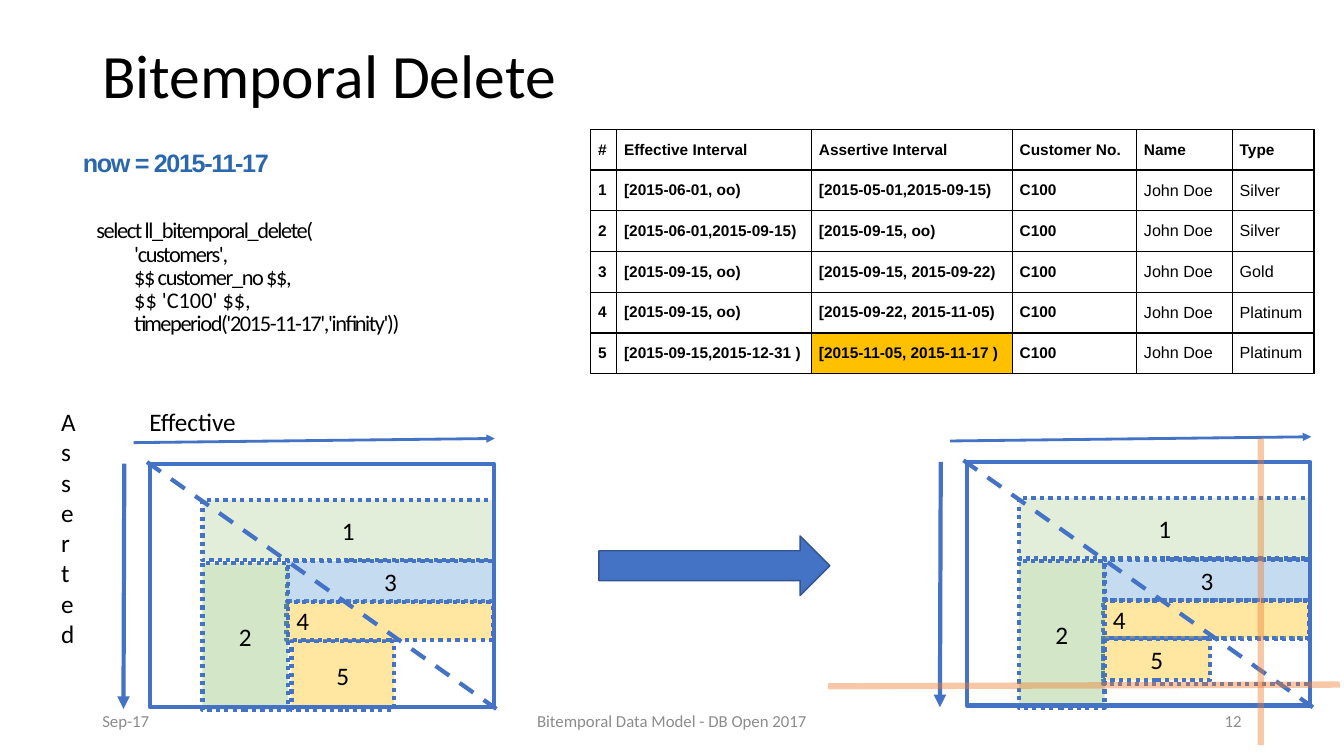
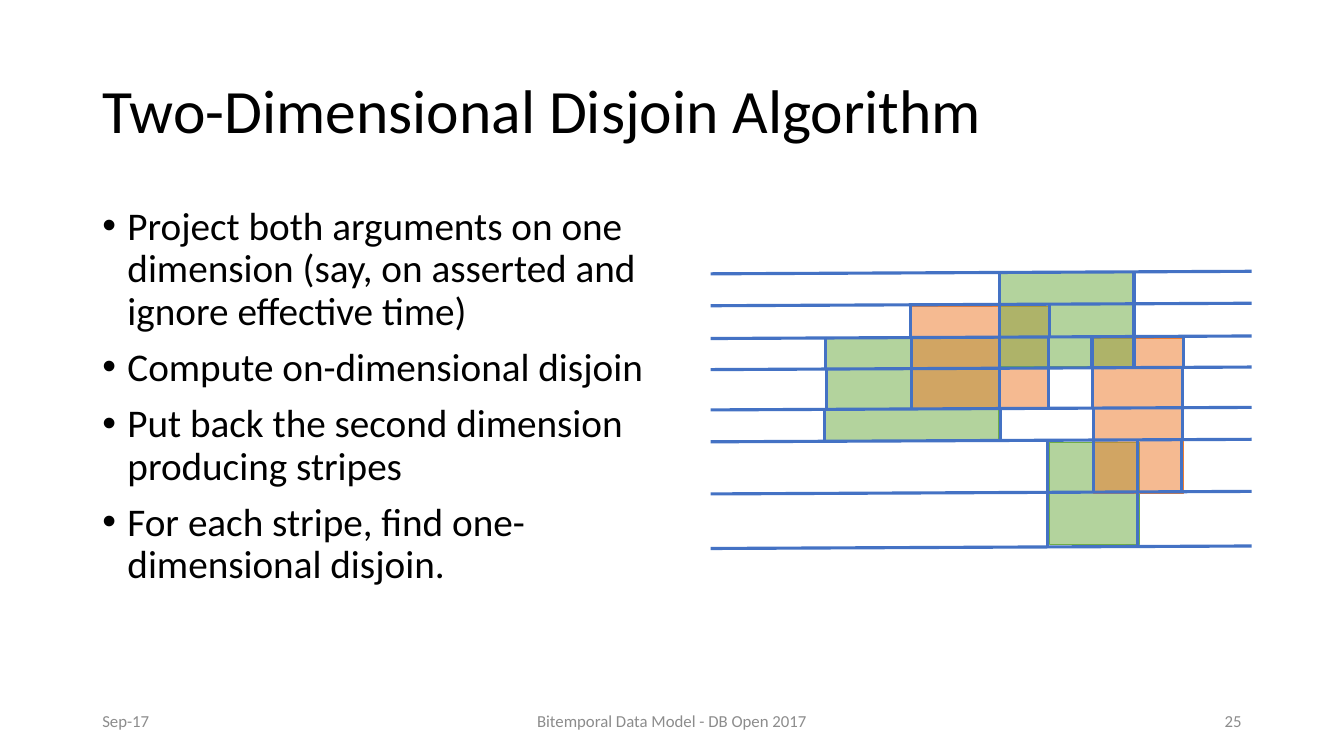
"""Build two slides on bitemporal data, laid out on a grid of 160 columns by 90 rows."""
from dataclasses import dataclass

from lxml import etree
from pptx import Presentation
from pptx import util as u
from pptx.dml import color as c
from pptx.enum import dml, shapes, text
from pptx.oxml import ns


@dataclass(frozen=True)
class Theme:
    body_font: str = "Calibri"
    table_font: str = "Arial"
    black: str = "000000"
    grey: str = "8C8C8C"
    blue: str = "4472C4"
    dark_blue: str = "325491"
    now_blue: str = "2A67AC"
    sky: str = "5B9BD5"
    green: str = "70AD47"
    orange: str = "ED7D31"
    gold: str = "FFC000"
    title: float = 44
    bullet: float = 28
    label: float = 18
    code: float = 16
    footer: float = 12
    table_bold: float = 11
    table_plain: float = 11.5


theme = Theme()
LEFT, CENTER, RIGHT = text.PP_ALIGN.LEFT, text.PP_ALIGN.CENTER, text.PP_ALIGN.RIGHT
TOP, MIDDLE = text.MSO_ANCHOR.TOP, text.MSO_ANCHOR.MIDDLE
DOTTED, DASHED = dml.MSO_LINE.ROUND_DOT, dml.MSO_LINE.DASH

presentation = Presentation()
presentation.slide_width, presentation.slide_height = u.Inches(40 / 3), u.Inches(7.5)
COLUMN = presentation.slide_width / 160
ROW = presentation.slide_height / 90


def put(slide, box, lines=(), size=theme.label, color=theme.black, align=LEFT, anchor=TOP,
        font=theme.body_font, bold=False, preset=None, fill=None, alpha=100,
        line=theme.blue, width=3, dash=None):
    """Place a text box, or a preset shape, on the grid."""
    left, top, wide, high = box
    place = [u.Emu(round(v)) for v in (left * COLUMN, top * ROW, wide * COLUMN, high * ROW)]
    if preset is None:
        shape = slide.shapes.add_textbox(*place)
    else:
        shape = slide.shapes.add_shape(preset, *place)
        shape.shadow.inherit = False
        shape.line.color.rgb = c.RGBColor.from_string(line)
        shape.line.width = u.Pt(width)
        if dash:
            shape.line.dash_style = dash
        if fill:
            shape.fill.solid()
            shape.fill.fore_color.rgb = c.RGBColor.from_string(fill)
            tint = shape.element.spPr.find(ns.qn("a:solidFill"))[0]
            etree.SubElement(tint, ns.qn("a:alpha"), val=str(alpha * 1000))
        else:
            shape.fill.background()
    frame = shape.text_frame
    frame.word_wrap = True
    frame.vertical_anchor = anchor
    for number, words in enumerate(lines):
        paragraph = frame.add_paragraph() if number else frame.paragraphs[0]
        paragraph.alignment = align
        run = paragraph.add_run()
        run.text = words
        run.font.name, run.font.size, run.font.bold = font, u.Pt(size), bold
        run.font.color.rgb = c.RGBColor.from_string(color)
    return shape


def rule(slide, x1, y1, x2, y2, color=theme.blue, width=2.25, dash=None, arrow=False, alpha=100):
    """Draw a straight line between two grid points."""
    connector = slide.shapes.add_connector(
        shapes.MSO_CONNECTOR.STRAIGHT, round(x1 * COLUMN), round(y1 * ROW),
        round(x2 * COLUMN), round(y2 * ROW))
    connector.line.color.rgb = c.RGBColor.from_string(color)
    connector.line.width = u.Pt(width)
    if dash:
        connector.line.dash_style = dash
    outline = connector.line.get_or_add_ln() if hasattr(connector.line, "get_or_add_ln") \
        else connector.element.spPr.find(ns.qn("a:ln"))
    if alpha < 100:
        tint = outline.find(ns.qn("a:solidFill"))[0]
        etree.SubElement(tint, ns.qn("a:alpha"), val=str(alpha * 1000))
    if arrow:
        etree.SubElement(outline, ns.qn("a:tailEnd"), type="triangle")
    etree.SubElement(connector.element.spPr, ns.qn("a:effectLst"))


pages = []
for heading, title_top, title_height, page in [
        ("Bitemporal Delete", 2.6, 13.6, "12"),
        ("Two-Dimensional Disjoin Algorithm", 4.8, 17.4, "25")]:
    slide = presentation.slides.add_slide(presentation.slide_layouts[6])
    title = put(slide, (11, title_top, 138, title_height), [heading], theme.title, anchor=MIDDLE)
    title.text_frame.paragraphs[0].line_spacing = 0.9
    for left, wide, words, align in [
            (11, 36, "Sep-17", LEFT),
            (53, 54, "Bitemporal Data Model - DB Open 2017", CENTER),
            (113, 36, page, RIGHT)]:
        put(slide, (left, 83.4, wide, 4.8), [words], theme.footer, theme.grey, align, MIDDLE)
    pages.append(slide)
delete_slide, disjoin_slide = pages

records = [
    ("#", "Effective Interval", "Assertive Interval", "Customer No.", "Name", "Type"),
    ("1", "[2015-06-01, oo)", "[2015-05-01,2015-09-15)", "C100", "John Doe", "Silver"),
    ("2", "[2015-06-01,2015-09-15)", "[2015-09-15, oo)", "C100", "John Doe", "Silver"),
    ("3", "[2015-09-15, oo)", "[2015-09-15, 2015-09-22)", "C100", "John Doe", "Gold"),
    ("4", "[2015-09-15, oo)", "[2015-09-22, 2015-11-05)", "C100", "John Doe", "Platinum"),
    ("5", "[2015-09-15,2015-12-31 )", "[2015-11-05, 2015-11-17 )", "C100", "John Doe", "Platinum"),
]
column_widths = [3.1, 23.2, 23.9, 14.8, 11.4, 9.7]
table = delete_slide.shapes.add_table(
    len(records), len(column_widths), round(70.3 * COLUMN), round(15.4 * ROW),
    round(sum(column_widths) * COLUMN), round(29.1 * ROW)).table
table.first_row = table.horz_banding = False
for column, wide in zip(table.columns, column_widths):
    column.width = round(wide * COLUMN)
for row_number, record in enumerate(records):
    for column_number, words in enumerate(record):
        cell = table.cell(row_number, column_number)
        cell.margin_left = round(0.9 * COLUMN)
        cell.margin_right = cell.margin_top = cell.margin_bottom = 0
        cell.vertical_anchor = MIDDLE
        run = cell.text_frame.paragraphs[0].add_run()
        run.text = words
        run.font.name = theme.table_font
        run.font.bold = row_number == 0 or column_number < 4
        run.font.size = u.Pt(theme.table_bold if run.font.bold else theme.table_plain)
        run.font.color.rgb = c.RGBColor.from_string(theme.black)
        properties = cell._tc.get_or_add_tcPr()
        for side in ("lnL", "lnR", "lnT", "lnB"):
            thick = side == "lnR" and column_number in (0, 5)
            border = etree.SubElement(properties, ns.qn("a:" + side),
                                      w=str(u.Pt(1.5 if thick else 1)))
            paint = etree.SubElement(border, ns.qn("a:solidFill"))
            etree.SubElement(paint, ns.qn("a:srgbClr"), val=theme.black)
        if (row_number, column_number) == (5, 2):
            cell.fill.solid()
            cell.fill.fore_color.rgb = c.RGBColor.from_string(theme.gold)
        else:
            cell.fill.background()

now = put(delete_slide, (8.7, 17, 29, 4.8), ["now = 2015-11-17"], color=theme.now_blue,
          font=theme.table_font, bold=True)
now.text_frame.paragraphs[0].runs[0]._r.get_or_add_rPr().set("spc", "-100")
code = put(delete_slide, (8.5, 25.6, 57.6, 15.6), [
    "select ll_bitemporal_delete(", "'customers',", "$$ customer_no $$,",
    "$$ 'C100' $$,", "timeperiod('2015-11-17','infinity'))"], theme.code)
for number, paragraph in enumerate(code.text_frame.paragraphs):
    paragraph.line_spacing = u.Pt(16.6)
    paragraph._p.get_or_add_pPr().set("marL", str(round((6.3 if number else 1.8) * COLUMN)))
    if number != 3:
        paragraph.runs[0]._r.get_or_add_rPr().set("spc", "-100")

put(delete_slide, (16.6, 47.8, 15.1, 3.2), ["Effective"])
asserted = put(delete_slide, (6.1, 47.8, 6.7, 38.9), ["Asserted"])
asserted.element.txBody.bodyPr.set("vert", "wordArtVert")
put(delete_slide, (71.3, 63.8, 27.5, 7.1), preset=shapes.MSO_SHAPE.RIGHT_ARROW,
    fill=theme.blue, line=theme.dark_blue, width=1)

shared_regions = [
    ("4", (16.2, 16.4, 24.6, 4.6), theme.gold, 37, LEFT),
    ("3", (16.3, 11.6, 24.6, 4.9), theme.sky, 35, CENTER),
    ("1", (6.2, 4.3, 34.7, 7.2), theme.green, 20, CENTER),
    ("2", (6.2, 11.8, 10.2, 17.5), theme.green, 30, CENTER),
]
before = [("5", (16.8, 21.1, 12.2, 8.2), theme.gold, 37, CENTER)]
after = [("5", (16.2, 21, 12.8, 5), theme.gold, 37, CENTER),
         ("", (16.2, 21, 24.7, 5.4), None, 100, CENTER)]
for origin_x, origin_y, own_regions in [(17.9, 55.2, before), (115.1, 55, after)]:
    for label, (x, y, wide, high), fill, alpha, align in own_regions + shared_regions:
        put(delete_slide, (origin_x + x, origin_y + y, wide, high), [label] if label else [],
            align=align, anchor=MIDDLE, preset=shapes.MSO_SHAPE.RECTANGLE,
            fill=fill, alpha=alpha, dash=DOTTED)
    put(delete_slide, (origin_x, origin_y, 40.9, 29), preset=shapes.MSO_SHAPE.RECTANGLE)
    for x1, y1, x2, y2, width, dash, arrow in [
            (-2, -2.5, 41, -3, 2, None, True),
            (-0.4, -0.2, 41.2, 29.2, 3, DASHED, False),
            (-3.1, 0, -3.2, 29.2, 3, None, True)]:
        rule(delete_slide, origin_x + x1, origin_y + y1, origin_x + x2, origin_y + y2,
             width=width, dash=dash, arrow=arrow)
for ends in [(98.6, 81.7, 159.5, 81.5), (150.1, 52.2, 150.1, 88.7)]:
    rule(delete_slide, *ends, color=theme.orange, width=4.5, alpha=42)

bullets = put(disjoin_slide, (11, 24, 70.3, 57.1), [
    "Project both arguments on one dimension (say, on asserted and ignore effective time)",
    "Compute on-dimensional disjoin",
    "Put back the second dimension producing stripes",
    "For each stripe, find one-dimensional disjoin."], theme.bullet)
for paragraph in bullets.text_frame.paragraphs:
    paragraph.line_spacing = 0.9
    paragraph.space_before = u.Pt(10)
    properties = paragraph._p.get_or_add_pPr()
    properties.set("marL", str(round(3 * COLUMN)))
    properties.set("indent", str(round(-3 * COLUMN)))
    etree.SubElement(properties, ns.qn("a:buFont"), typeface=theme.table_font)
    etree.SubElement(properties, ns.qn("a:buChar"), char="•")

for box, color in [
        ((98.3, 40.3, 20.6, 12.2), theme.green),
        ((124.9, 52.6, 10.7, 12.2), theme.green),
        ((130.2, 40.3, 10.7, 18.4), theme.orange),
        ((108.4, 36.4, 16.4, 12.2), theme.orange),
        ((119, 32.3, 16, 11.3), theme.green)]:
    put(disjoin_slide, box, preset=shapes.MSO_SHAPE.RECTANGLE, fill=color, alpha=53,
        line=color, width=0.25)

stripe_edges = [32.6, 36.4, 40.3, 44, 48.8, 52.6, 58.8, 65.3]
stripe_cuts = [
    (119, 135),
    (108.4, 119, 124.9, 135),
    (98.3, 108.5, 119, 124.8, 130, 135, 140.9),
    (98.4, 108.5, 119, 124.8, 130.1, 140.8),
    (98.2, 119.1, 130.2, 140.8),
    (124.7, 130.2, 135.4, 140.7),
    (124.7, 135.4),
]
for edge in stripe_edges:
    rule(disjoin_slide, 84.6, edge, 149, edge - 0.3)
for top, bottom, cuts in zip(stripe_edges, stripe_edges[1:], stripe_cuts):
    for cut in cuts:
        rule(disjoin_slide, cut, top - 0.2, cut, bottom - 0.2)

presentation.save("out.pptx")
